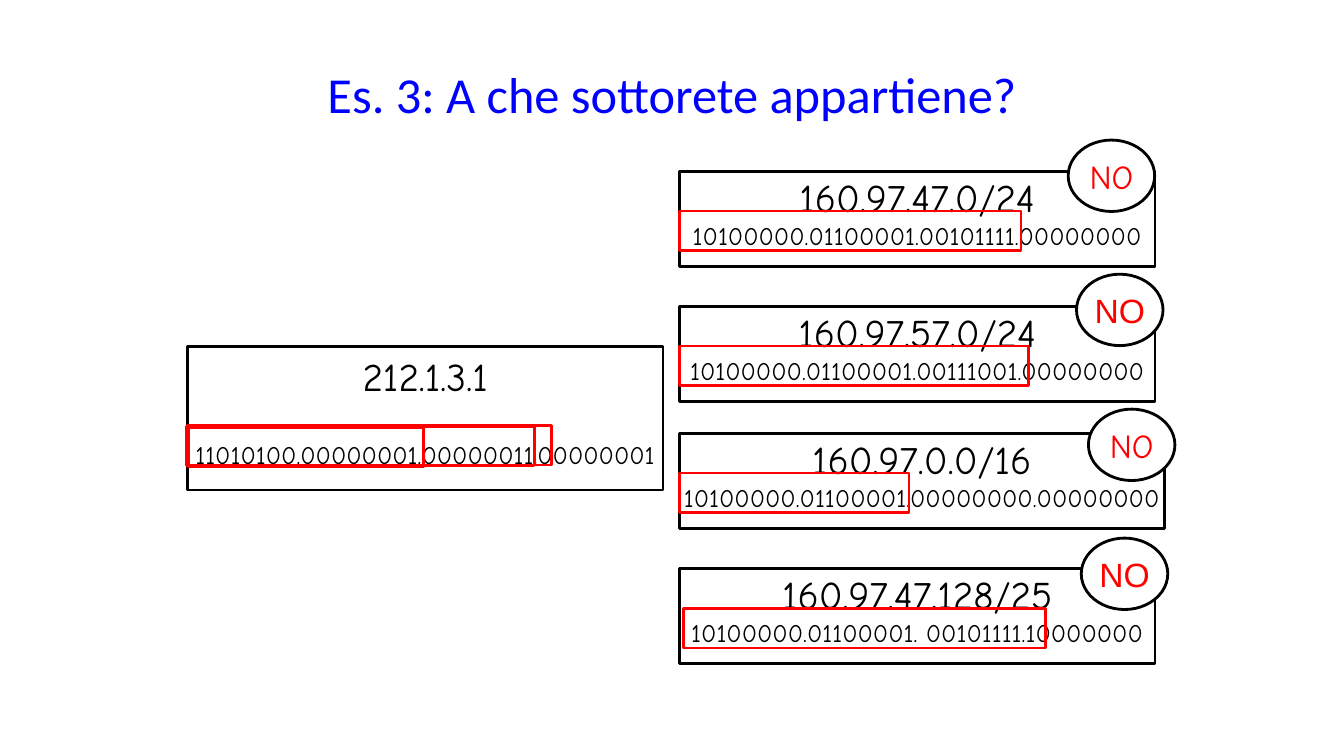
"""Build the slide that asks which subnet an IP address belongs to."""
from pptx import Presentation
from pptx.dml.color import RGBColor
from pptx.enum.shapes import MSO_SHAPE as Preset
from pptx.enum.text import MSO_ANCHOR as Anchor, PP_ALIGN as Align
from pptx.util import Cm, Pt

TITLE = "Es. 3: A che sottorete appartiene?"
HAND, SANS = "Comic Neue", "Arial"
BLACK, RED, BLUE, WHITE = "000000", "FF0000", "0000FF", "FFFFFF"

HOST = ("212.1.3.1", "11010100.00000001.00000011.00000001")
HOST_AREA = (4.72, 8.74, 11.99, 3.61)
HOST_PREFIXES = [(4.7, 10.74, 8.76), (4.75, 10.77, 5.92),
                 (4.72, 10.72, 8.76), (4.72, 10.72, 9.19)]

SUBNET_LEFT, SUBNET_HEIGHT = 17.12, 2.39
PREFIX_DROP, PREFIX_HEIGHT = 1.0, 1.0
VERDICT, VERDICT_SIZE = "NO", (2.18, 1.8)
# address, bits, top, width, (prefix left, width), (verdict left, top, font)
SUBNETS = [
    ("160.97.47.0/24", "10100000.01100001.00101111.00000000",
     4.32, 11.99, (17.12, 8.61), (26.92, 3.53, HAND)),
    ("160.97.57.0/24", "10100000.01100001.00111001.00000000",
     7.72, 11.99, (17.12, 8.81), (27.13, 6.91, SANS)),
    ("160.97.0.0/16", "10100000.01100001.00000000.00000000",
     10.92, 12.22, (17.12, 5.79), (27.43, 10.31, HAND)),
    ("160.97.47.128/25", "10100000.01100001. 00101111.10000000",
     14.33, 11.99, (17.22, 9.12), (27.25, 13.56, SANS)),
]


def rgb(value):
    return RGBColor.from_string(value)


def outline(slide, preset, area, line, fill=None):
    shape = slide.shapes.add_shape(preset, *map(Cm, area))
    shape.shadow.inherit = False
    if fill:
        shape.fill.solid()
        shape.fill.fore_color.rgb = rgb(fill)
    else:
        shape.fill.background()
    shape.line.color.rgb = rgb(line)
    shape.line.width = Pt(2)
    return shape


def write(shape, lines, font, color, anchor=Anchor.MIDDLE, inset=0, gap=0):
    frame = shape.text_frame
    frame.word_wrap = False
    frame.vertical_anchor = anchor
    frame.margin_left = frame.margin_right = frame.margin_bottom = 0
    frame.margin_top = Cm(inset)
    for index, (text, size) in enumerate(lines):
        paragraph = frame.add_paragraph() if index else frame.paragraphs[0]
        paragraph.text = text
        paragraph.alignment = Align.CENTER
        if index and gap:
            paragraph.space_before = Pt(gap)
        paragraph.font.name = font
        paragraph.font.size = Pt(size)
        paragraph.font.color.rgb = rgb(color)


def address_box(slide, area, address, bits, inset, gap=0):
    box = outline(slide, Preset.RECTANGLE, area, BLACK)
    write(box, [(address, 28), (bits, 18)], HAND, BLACK, Anchor.TOP, inset, gap)


def main():
    deck = Presentation()
    deck.slide_width, deck.slide_height = Cm(33.87), Cm(19.05)
    slide = deck.slides.add_slide(deck.slide_layouts[6])

    title = slide.shapes.add_textbox(Cm(1.7), Cm(0.76), Cm(30.48), Cm(3.18))
    write(title, [(TITLE, 36)], "Calibri", BLUE)

    address_box(slide, HOST_AREA, *HOST, inset=0.15, gap=28.5)
    prefixes = list(HOST_PREFIXES)
    for address, bits, top, width, (left, prefix_width), verdict in SUBNETS:
        address_box(slide, (SUBNET_LEFT, top, width, SUBNET_HEIGHT),
                    address, bits, inset=0.05)
        prefixes.append((left, top + PREFIX_DROP, prefix_width))
        verdict_left, verdict_top, font = verdict
        badge = outline(slide, Preset.OVAL,
                        (verdict_left, verdict_top, *VERDICT_SIZE), BLACK, WHITE)
        write(badge, [(VERDICT, 24)], font, RED)

    for left, top, width in prefixes:
        outline(slide, Preset.RECTANGLE, (left, top, width, PREFIX_HEIGHT), RED)

    deck.save("out.pptx")


if __name__ == "__main__":
    main()
